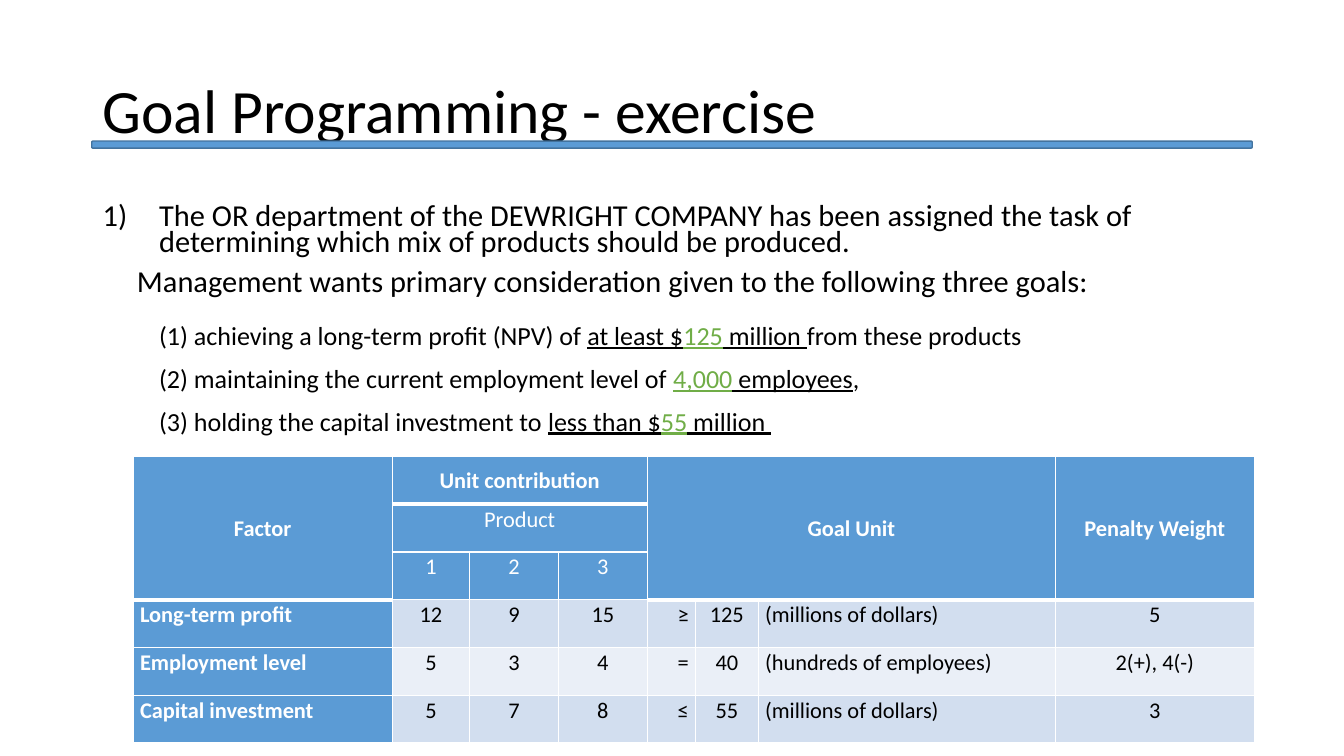
import pptx
import pptx.util
import pptx.dml.color
import pptx.enum.text
import pptx.enum.shapes
import pptx.oxml.ns
import lxml.etree

SCALE = 9144
FONT = "Calibri"
HUES = {
    "black": "000000", "white": "FFFFFF", "green": "70AD47",
    "blue": "5B9BD5", "edge": "43739E", "dark": "D2DEEF", "light": "EAEFF7",
}
ALIGN = pptx.enum.text.PP_ALIGN
ANCHOR = pptx.enum.text.MSO_ANCHOR
COLS = [257, 77, 88, 88, 48, 62, 295, 197]
HEADS = [
    (0, 0, 2, 0, "Factor"), (0, 1, 0, 3, "Unit contribution"),
    (0, 4, 2, 6, "Goal Unit"), (0, 7, 2, 7, "Penalty Weight"),
    (1, 1, 1, 3, "Product"),
    (2, 1, 2, 1, "1"), (2, 2, 2, 2, "2"), (2, 3, 2, 3, "3"),
]
ROWS = [
    ["Long-term profit", "12", "9", "15", "≥", "125", "(millions of dollars)", "5"],
    ["Employment level", "5", "3", "4", "=", "40", "(hundreds of employees)", "2(+), 4(-)"],
    ["Capital investment", "5", "7", "8", "≤", "55", "(millions of dollars)", "3"],
]
GOALS = [
    [("(1) achieving a long-term profit (NPV) of ", "black", False),
     ("at least $", "black", True), ("125", "green", True),
     (" million ", "black", True), ("from these products", "black", False)],
    [("(2) maintaining the current employment level of ", "black", False),
     ("4,000", "green", True), (" employees", "black", True), (",", "black", False)],
    [("(3) holding the capital investment to ", "black", False),
     ("less than $", "black", True), ("55", "green", True),
     (" million ", "black", True)],
]


def px(num):
    return pptx.util.Emu(num * SCALE)


def rgb(hue):
    return pptx.dml.color.RGBColor.from_string(HUES[hue])


def add_run(para, text, size, hue="black", bold=False, under=False):
    run = para.add_run()
    run.text = text
    font = run.font
    font.name, font.size, font.bold = FONT, pptx.util.Pt(size), bold
    font.underline = under
    font.color.rgb = rgb(hue)


def add_box(slide, left, top, width, height, anchor):
    box = slide.shapes.add_textbox(px(left), px(top), px(width), px(height))
    frame = box.text_frame
    frame.word_wrap = True
    frame.vertical_anchor = anchor
    return frame


def set_para(para, space, before=0, left=0, hang=0):
    para.line_spacing = space
    para.space_before = pptx.util.Pt(before)
    props = para._p.get_or_add_pPr()
    props.set("marL", str(px(left)))
    props.set("indent", str(-px(hang)))
    return props


def add_title(slide):
    para = add_box(slide, 92, 40, 1150, 145, ANCHOR.MIDDLE).paragraphs[0]
    set_para(para, 0.9)
    add_run(para, "Goal Programming - exercise", 44)


def add_rule(slide):
    bar = slide.shapes.add_shape(
        pptx.enum.shapes.MSO_SHAPE.ROUNDED_RECTANGLE,
        px(91), px(140), px(1151), px(7))
    bar.shadow.inherit = False
    bar.fill.solid()
    bar.fill.fore_color.rgb = rgb("blue")
    bar.line.color.rgb = rgb("edge")
    bar.line.width = pptx.util.Pt(1)


def add_body(slide):
    frame = add_box(slide, 92, 200, 1150, 267, ANCHOR.TOP)
    task = frame.paragraphs[0]
    props = set_para(task, 0.7, 10, 56, 56)
    mark = lxml.etree.SubElement(props, pptx.oxml.ns.qn("a:buAutoNum"))
    mark.set("type", "arabicParenR")
    add_run(task, "The OR department of the DEWRIGHT COMPANY has been assigned "
            "the task of determining which mix of products should be produced.", 21.7)
    lead = frame.add_paragraph()
    set_para(lead, 0.7, 10, 34)
    add_run(lead, "Management wants primary consideration given to the "
            "following three goals:", 21.7)
    for num, goal in enumerate(GOALS):
        para = frame.add_paragraph()
        set_para(para, 0.7, 15 if num else 22, 56)
        for text, hue, under in goal:
            add_run(para, text, 18.6, hue, under=under)


def set_edges(cell, top, base):
    props = cell._tc.get_or_add_tcPr()
    for side, width in zip("LRTB", (1, 1, top, base)):
        line = lxml.etree.SubElement(props, pptx.oxml.ns.qn("a:ln" + side))
        line.set("w", str(pptx.util.Pt(width)))
        fill = lxml.etree.SubElement(line, pptx.oxml.ns.qn("a:solidFill"))
        tint = lxml.etree.SubElement(fill, pptx.oxml.ns.qn("a:srgbClr"))
        tint.set("val", HUES["white"])


def fill_cell(cell, text, hue, align, bold, anchor):
    cell.vertical_anchor = anchor
    para = cell.text_frame.paragraphs[0]
    para.alignment = align
    para.line_spacing = 1.06
    add_run(para, text, 16, hue, bold)


def style_cell(cell, row, col):
    mid = 1 <= col <= 3
    top = 3 if (row == 1 and mid) or (row == 3 and not mid) else 1
    base = 3 if row == 0 or (row == 2 and not mid) else 1
    set_edges(cell, top, base)
    cell.margin_left = cell.margin_right = px(7)
    cell.margin_top = cell.margin_bottom = 0
    band = "dark" if row % 2 else "light"
    cell.fill.solid()
    cell.fill.fore_color.rgb = rgb("blue" if row < 3 or col == 0 else band)


def add_grid(slide):
    grid = slide.shapes.add_table(
        6, len(COLS), px(132), px(453), px(sum(COLS)), px(284)).table
    for col, width in enumerate(COLS):
        grid.columns[col].width = px(width)
        for row in range(6):
            style_cell(grid.cell(row, col), row, col)
    for row, col, last, end, text in HEADS:
        cell = grid.cell(row, col)
        if (row, col) != (last, end):
            cell.merge(grid.cell(last, end))
        bold = row == 0
        fill_cell(cell, text, "white", ALIGN.CENTER, bold,
                  ANCHOR.MIDDLE if bold else ANCHOR.TOP)
    sides = {0: ALIGN.LEFT, 4: ALIGN.RIGHT, 6: ALIGN.LEFT}
    for row, texts in enumerate(ROWS, 3):
        for col, text in enumerate(texts):
            fill_cell(grid.cell(row, col), text, "black" if col else "white",
                      sides.get(col, ALIGN.CENTER), col == 0, ANCHOR.TOP)


def main():
    deck = pptx.Presentation()
    deck.slide_width, deck.slide_height = px(1333), px(750)
    slide = deck.slides.add_slide(deck.slide_layouts[6])
    add_body(slide)
    add_title(slide)
    add_rule(slide)
    add_grid(slide)
    deck.save("out.pptx")


if __name__ == "__main__":
    main()
